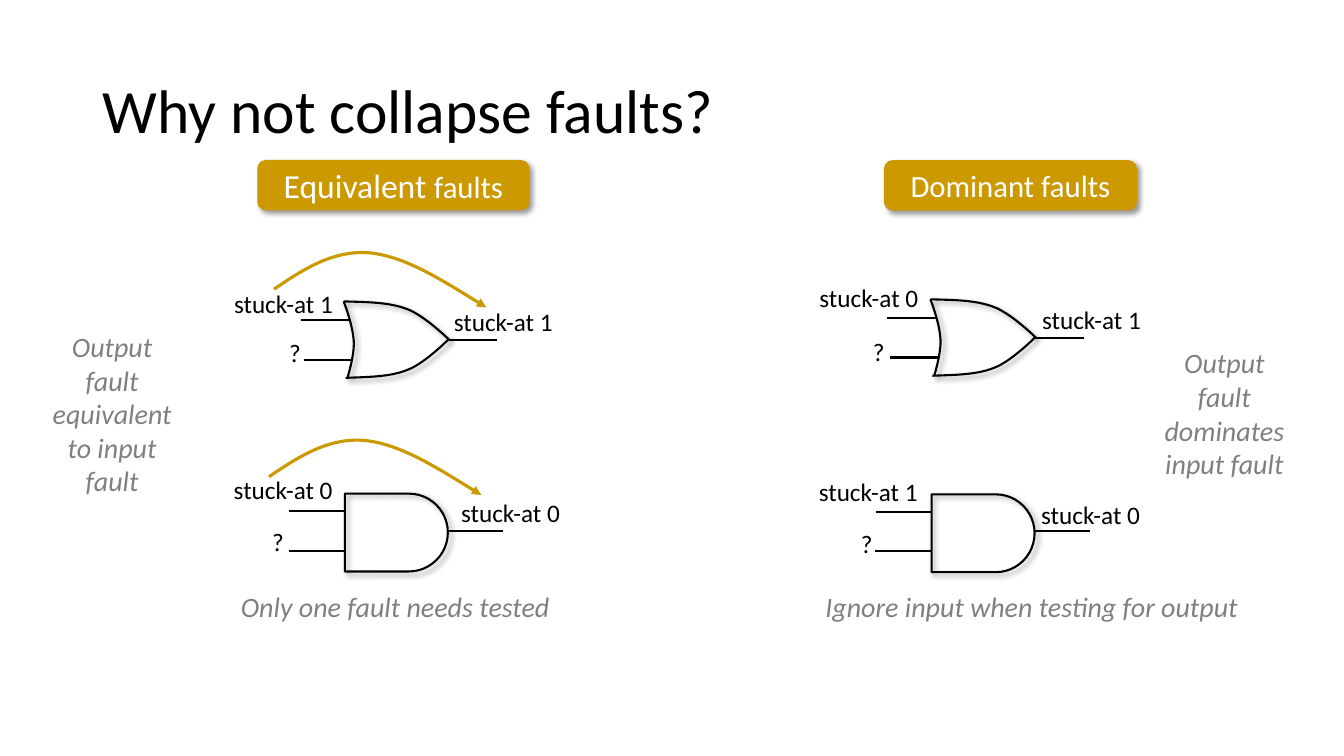
from lxml.etree import SubElement as Sub
from pptx import Presentation as Deck
from pptx.dml.color import RGBColor as Rgb
from pptx.enum.shapes import MSO_CONNECTOR as Link, MSO_SHAPE as Kind
from pptx.enum.text import MSO_ANCHOR as Anchor, MSO_AUTO_SIZE as Fit, PP_ALIGN as Align
from pptx.oxml.ns import qn
from pptx.util import Pt

BLACK = Rgb(0x00, 0x00, 0x00)
WHITE = Rgb(0xFF, 0xFF, 0xFF)
GOLD = Rgb(0xCC, 0x99, 0x00)
GREY = Rgb(0x80, 0x80, 0x80)

TITLE = {"size": Pt(44), "name": "Calibri"}
LABEL = {"size": Pt(18), "name": "Calibri"}
NOTE = {"size": Pt(20), "name": "Calibri", "italic": True}
BADGE = {"size": Pt(22), "name": "Calibri"}
LARGE = {"size": Pt(24), "name": "Calibri"}

OR_TOP = [(0, 0), (16.5, 0.5), (32.5, 0.5), (45.4, 5.5), (57.6, 10), (75.4, 27.4), (75.4, 27.4)]
OR_BASE = [(1.4, 54.6), (17.3, 54), (33, 54), (45.4, 49), (57.6, 44.6), (75, 27), (75, 27)]
OR_BACK = [(0, 0), (3.6, 9.4), (6.5, 19.4), (7.2, 28), (8, 37.4), (2.9, 54), (2.9, 54)]
ARC = [(0, 0), (21, -14.4), (42.5, -28), (67.7, -26), (93, -23.8), (122.4, -5), (151.6, 13)]
OR_WIRES = [(75, 27.8), (-30.8, 13.5), (-28.6, 41.6)]
AND_WIRES = [(73.6, 26.4), (-40, 12.7), (-40.2, 40.7)]


def add_run(para, words, style, color):
    """Add a run with the given font values."""
    run = para.add_run()
    run.text = words
    for key, value in style.items():
        setattr(run.font, key, value)
    run.font.color.rgb = color


def add_text(slide, box, words, style, color, wrap=True, align=Align.LEFT):
    """Place a text box and return its frame."""
    frame = slide.shapes.add_textbox(*map(Pt, box)).text_frame
    frame.word_wrap = wrap
    frame.auto_size = Fit.SHAPE_TO_FIT_TEXT
    frame.paragraphs[0].alignment = align
    add_run(frame.paragraphs[0], words, style, color)
    return frame


def add_shade(shape):
    """Give a shape a soft drop shadow."""
    shape.shadow.inherit = False
    effects = shape._element.spPr.find(qn("a:effectLst"))
    drop = Sub(effects, qn("a:outerShdw"), blurRad=str(Pt(4)), dist=str(Pt(3)),
               dir="2700000", algn="tl", rotWithShape="0")
    tint = Sub(drop, qn("a:srgbClr"), val="000000")
    Sub(tint, qn("a:alpha"), val="40000")


def set_line(shape, color, width):
    """Set the colour and width of an outline."""
    shape.line.color.rgb = color
    shape.line.width = Pt(width)


def add_curve(slide, x, y, knots, color=BLACK, width=1.5):
    """Draw a chain of cubic curves from a corner point."""
    dots = [(100 * dx, 100 * dy) for dx, dy in knots]
    pen = slide.shapes.build_freeform(*dots[0], scale=Pt(1) / 100)
    pen.add_line_segments(dots[1:], close=False)
    curve = pen.convert_to_shape(Pt(x), Pt(y))
    route = next(curve._element.iter(qn("a:path")))
    legs = route.findall(qn("a:lnTo"))
    for first in range(0, len(legs), 3):
        bend = Sub(route, qn("a:cubicBezTo"))
        for leg in legs[first:first + 3]:
            bend.append(leg[0])
            route.remove(leg)
    curve.fill.background()
    set_line(curve, color, width)
    curve.shadow.inherit = False
    return curve


def add_arc(slide, x, y):
    """Draw the arrow from an input fault to an output fault."""
    arc = add_curve(slide, x, y, ARC, GOLD, 2.25)
    Sub(arc.line._get_or_add_ln(), qn("a:tailEnd"), type="triangle")


def add_wires(slide, x, y, wires, size):
    """Draw level wires of one length."""
    for dx, dy in wires:
        wire = slide.shapes.add_connector(
            Link.STRAIGHT, Pt(x + dx), Pt(y + dy), Pt(x + dx + size), Pt(y + dy))
        set_line(wire, BLACK, 1.5)
        Sub(wire._element.spPr, qn("a:effectLst"))


def add_labels(slide, x, y, labels):
    """Write the fault labels around a gate."""
    for words, dx, dy in labels:
        wide = 23 if words == "?" else 86.4
        add_text(slide, (x + dx, y + dy, wide, 29), words, LABEL, BLACK, wrap=False)


def add_or(slide, x, y, labels):
    """Draw an OR gate with wires and labels."""
    for knots in (OR_TOP, OR_BASE, OR_BACK):
        add_shade(add_curve(slide, x, y, knots))
    add_wires(slide, x, y, OR_WIRES, 34.6)
    add_labels(slide, x, y, labels)


def add_and(slide, x, y, labels):
    """Draw an AND gate with wires and labels."""
    wide, high = 73.6, 55.6
    shift = (wide - high) / 2
    gate = slide.shapes.add_shape(
        Kind.ROUND_2_SAME_RECTANGLE, Pt(x + shift), Pt(y - shift), Pt(high), Pt(wide))
    gate.adjustments[0] = 0.5
    gate.rotation = 90
    gate.fill.background()
    set_line(gate, BLACK, 1.5)
    add_shade(gate)
    add_wires(slide, x, y, AND_WIRES, 39.6)
    add_labels(slide, x, y, labels)


def add_badge(slide, box, parts):
    """Draw a gold heading badge."""
    badge = slide.shapes.add_shape(Kind.ROUNDED_RECTANGLE, *map(Pt, box))
    badge.adjustments[0] = 0.168
    badge.fill.solid()
    badge.fill.fore_color.rgb = GOLD
    badge.line.fill.background()
    add_shade(badge)
    badge.text_frame.vertical_anchor = Anchor.MIDDLE
    para = badge.text_frame.paragraphs[0]
    para.alignment = Align.CENTER
    for words, style in parts:
        add_run(para, words, style, WHITE)


def add_notes(slide, notes):
    """Write the grey remarks of a half."""
    for words, box in notes:
        add_text(slide, box, words, NOTE, GREY, align=Align.CENTER)


def add_title(slide, box):
    """Write the slide title."""
    frame = add_text(slide, box, "Why not collapse faults?", TITLE, BLACK)
    frame.auto_size = Fit.NONE
    frame.vertical_anchor = Anchor.MIDDLE
    frame.paragraphs[0].line_spacing = 0.9


def add_left(slide, x, y):
    """Draw the half on equal faults."""
    add_badge(slide, (x - 61.7, y - 101, 194.4, 36), [("Equivalent ", LARGE), ("faults", BADGE)])
    add_or(slide, x, y, [("stuck-at 1", -85.4, -13), ("stuck-at 1", 71.6, 0), ("?", -46, 21.8)])
    add_and(slide, x + 0.8, y + 137.3,
            [("stuck-at 0", -86.4, -17), ("stuck-at 0", 76, -1), ("?", -59, 19.5)])
    add_arc(slide, x - 49.7, y - 8.7)
    add_arc(slide, x - 53.3, y + 125.3)
    add_notes(slide, [
        ("Output fault equivalent to input fault", (x - 220.1, y + 16.5, 109.4, 128)),
        ("Only one fault needs tested", (x - 106, y + 202.3, 285.8, 31.7))])


def add_right(slide, x, y):
    """Draw the half on dominant faults."""
    add_badge(slide, (x - 33.2, y - 99.4, 180.7, 36), [("Dominant faults", BADGE)])
    add_or(slide, x, y, [("stuck-at 0", -86.4, -15.8), ("stuck-at 1", 72.7, 0), ("?", -48.2, 23)])
    add_and(slide, x + 0.8, y + 139.3,
            [("stuck-at 1", -87.6, -16.2), ("stuck-at 0", 71.2, -0.2), ("?", -57.6, 20.5)])
    add_notes(slide, [
        ("Output fault dominates input fault", (x + 155.3, y + 29.7, 109.4, 104.4)),
        ("Ignore input when testing for output", (x - 87.9, y + 203.8, 320.4, 31.7))])


def main():
    """Build and save the slide."""
    deck = Deck()
    deck.slide_width, deck.slide_height = Pt(960), Pt(540)
    slide = deck.slides.add_slide(deck.slide_layouts[6])
    add_title(slide, (66.2, 28.8, 828, 104.4))
    add_left(slide, 245.5, 215.3)
    add_right(slide, 664.6, 213.8)
    deck.save("out.pptx")


if __name__ == "__main__":
    main()
